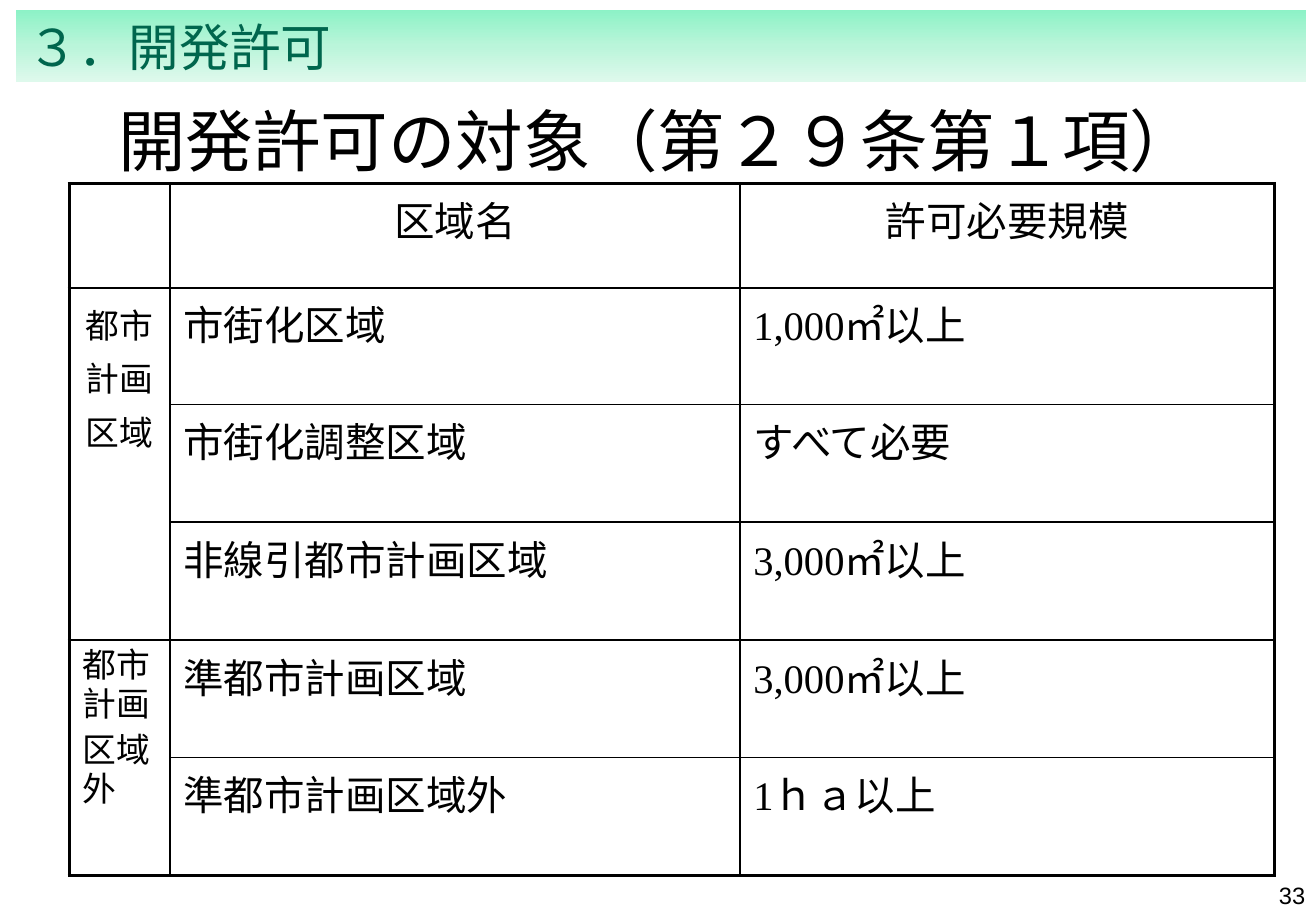
from lxml import etree
from pptx import Presentation
from pptx.dml.color import RGBColor
from pptx.enum import shapes, text
from pptx.oxml import ns
from pptx.util import Pt

PX = 9144  # EMU per px, 100 px to the inch
SERIF, SANS, CJK = "Times New Roman", "Arial", "Noto Sans CJK JP"
BLACK = "000000"
CENTER, LEFT, RIGHT = text.PP_ALIGN.CENTER, text.PP_ALIGN.LEFT, text.PP_ALIGN.RIGHT

COLUMNS = [83, 469, 440]
ROWS = [86, 96, 97, 97, 97, 97]
HEADINGS = ["区域名", "許可必要規模"]
ZONES = [
    ("市街化区域", "1,000㎡以上"),
    ("市街化調整区域", "すべて必要"),
    ("非線引都市計画区域", "3,000㎡以上"),
    ("準都市計画区域", "3,000㎡以上"),
    ("準都市計画区域外", "1ｈａ以上"),
]
# first row, last row, lines, alignment, line spacing
GROUPS = [
    (1, 3, ["都市計画区域"], CENTER, 1.1),
    (4, 5, ["都市計画", "区域外"], LEFT, 0.8),
]


def px(*lengths):
    return [round(length * PX) for length in lengths]


def color(value):
    return RGBColor.from_string(value)


def write(frame, lines, size, font=SERIF, ink=BLACK, align=LEFT, spacing=None):
    """Put each line in its own paragraph, as one formatted run."""
    for index, line in enumerate(lines):
        para = frame.add_paragraph() if index else frame.paragraphs[0]
        para.alignment = align
        para.line_spacing = spacing
        if index:
            para.space_before = Pt(size * 0.2)
        span = para.add_run()
        span.text = line
        span.font.size = Pt(size)
        span.font.name = font
        span.font.bold = False
        span.font.color.rgb = color(ink)
        east_asian = etree.SubElement(span.font._element, ns.qn("a:ea"))
        east_asian.set("typeface", CJK)


def add_banner(page, box):
    banner = page.shapes.add_shape(shapes.MSO_SHAPE.RECTANGLE, *px(*box))
    banner.shadow.inherit = False
    banner.line.fill.background()
    banner.fill.gradient()
    banner.fill.gradient_angle = 270
    stops = banner._element.spPr.find(".//" + ns.qn("a:gsLst"))
    for stop in list(stops):
        stops.remove(stop)
    for percent, value in [(0, "8CF2C6"), (50, "BAF5DA"), (100, "DEF9EC")]:
        stop = etree.SubElement(stops, ns.qn("a:gs"), pos=str(percent * 1000))
        etree.SubElement(stop, ns.qn("a:srgbClr"), val=value)
    banner.text_frame.word_wrap = True
    write(banner.text_frame, ["３．開発許可"], 30, CJK, "00664D")


def place_title(page, box):
    title = page.shapes.title
    title.left, title.top, title.width, title.height = px(*box)
    title.text_frame.vertical_anchor = text.MSO_ANCHOR.MIDDLE
    write(title.text_frame, ["開発許可の対象（第２９条第１項）"], 40, align=CENTER)


def set_borders(cell, outer):
    """Draw thick lines on the outer sides and thin ones elsewhere."""
    properties = cell._tc.get_or_add_tcPr()
    for index, side in enumerate("LRTB"):
        width = Pt(2.25 if side in outer else 1)
        line = etree.Element(ns.qn("a:ln" + side), w=str(width))
        fill = etree.SubElement(line, ns.qn("a:solidFill"))
        etree.SubElement(fill, ns.qn("a:srgbClr"), val=BLACK)
        properties.insert(index, line)


def add_zone_table(page, box):
    frame = page.shapes.add_table(len(ROWS), len(COLUMNS), *px(*box))
    table = frame.table
    table.first_row = table.horz_banding = False
    for column, width in zip(table.columns, px(*COLUMNS)):
        column.width = width
    for row, height in zip(table.rows, px(*ROWS)):
        row.height = height

    for first, last, lines, align, spacing in GROUPS:
        cell = table.cell(first, 0)
        cell.merge(table.cell(last, 0))
        cell._tc.get_or_add_tcPr().set("vert", "eaVert")
        write(cell.text_frame, lines, 20, align=align, spacing=spacing)
    for r, values in enumerate([HEADINGS, *ZONES]):
        for c, value in enumerate(values, 1):
            write(table.cell(r, c).text_frame, [value], 24,
                  align=LEFT if r else CENTER)

    for r in range(len(ROWS)):
        for c in range(len(COLUMNS)):
            cell = table.cell(r, c)
            cell.margin_left, cell.margin_right = px(11, 11)
            cell.margin_top, cell.margin_bottom = px(5, 5)
            cell.fill.background()
            bottom = r + (cell.span_height if cell.is_merge_origin else 1)
            edges = {"L": c == 0, "R": c == len(COLUMNS) - 1,
                     "T": r == 0, "B": bottom == len(ROWS)}
            set_borders(cell, [side for side in edges if edges[side]])


def add_page_number(page, box):
    number = page.shapes.add_textbox(*px(*box))
    number.text_frame.word_wrap = True
    write(number.text_frame, ["33"], 14, SANS, align=RIGHT)


def main():
    deck = Presentation()
    deck.slide_width, deck.slide_height = px(1083, 750)
    page = deck.slides.add_slide(deck.slide_layouts[5])
    place_title(page, (81, 67, 921, 96))
    add_zone_table(page, (57, 151, sum(COLUMNS), sum(ROWS)))
    add_banner(page, (13, 8, 1062, 60))
    add_page_number(page, (831, 720, 253, 52))
    deck.save("out.pptx")


if __name__ == "__main__":
    main()
